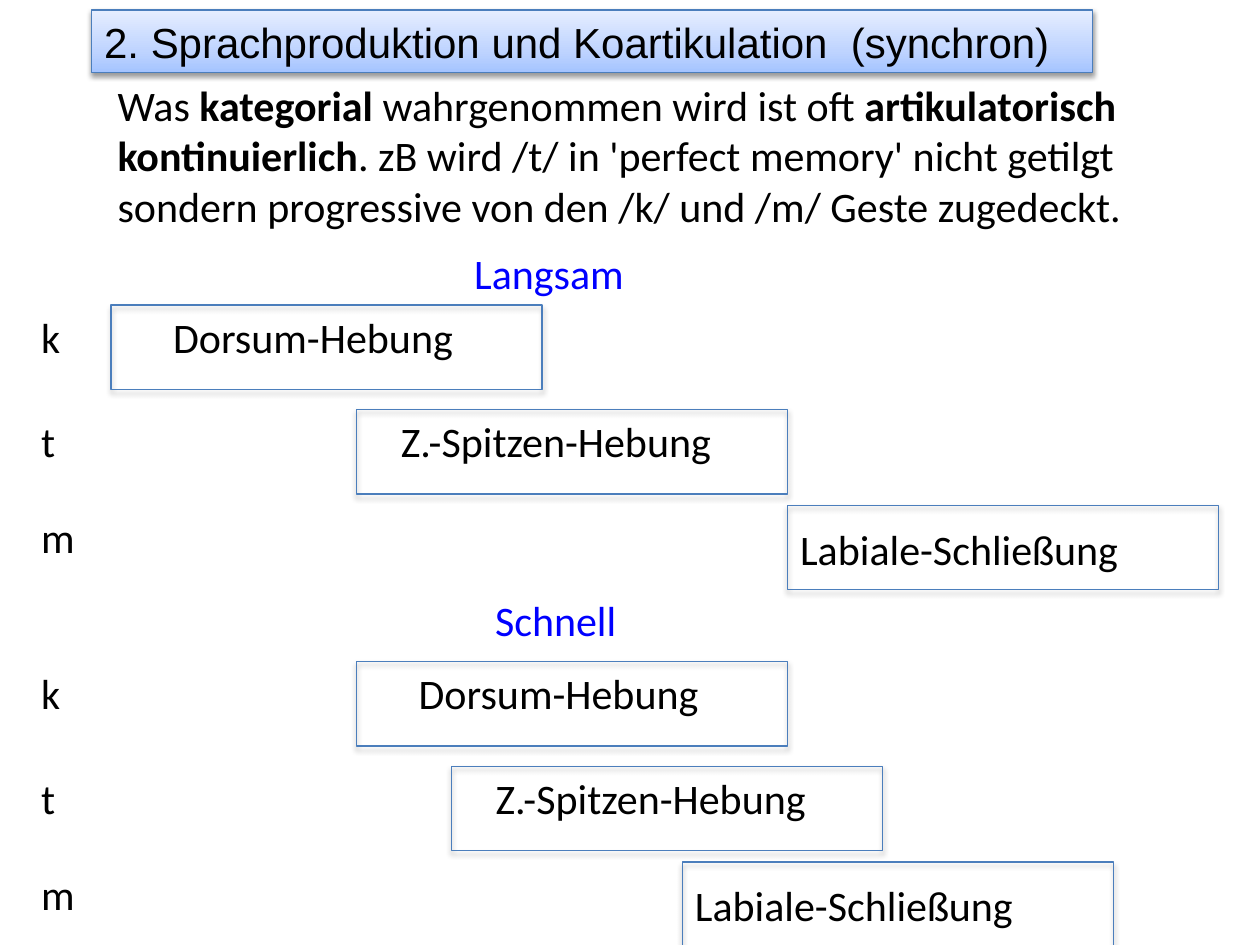
from copy import deepcopy

from lxml.etree import SubElement
from pptx import Presentation
from pptx.dml.color import RGBColor
from pptx.enum.shapes import MSO_SHAPE as Shape
from pptx.enum.text import MSO_ANCHOR as Anchor, MSO_AUTO_SIZE as AutoSize, PP_ALIGN as Align
from pptx.oxml.ns import qn
from pptx.util import Cm, Pt

COLORS = {"text": "000000", "tempo": "0000FF", "line": "4B7EBC", "shadow": "000000"}
TITLE_GRADIENT = [(0, "A4C4FF"), (0.35, "BFD4FF"), (1, "E6EEFF")]

TITLE = "2. Sprachproduktion und Koartikulation  (synchron)"
INTRO = [
    ("Was ", False),
    ("kategorial ", True),
    ("wahrgenommen wird ist oft ", False),
    ("artikulatorisch kontinuierlich", True),
    (". zB wird /t/ in 'perfect memory' nicht getilgt sondern progressive "
     "von den /k/ und /m/ Geste zugedeckt.", False),
]

# Lengths in cm: row offset, label inset and width inside the bar
GESTURES = [
    dict(sound="k", name="Dorsum-Hebung", row=0, inset=(1, 0), width=6.6),
    dict(sound="t", name="Z.-Spitzen-Hebung", row=2.11, inset=(0.64, 0), width=8.05),
    dict(sound="m", name="Labiale-Schließung", row=4.04, inset=(0, 0.23), width=7.62),
]
TEMPOS = [
    dict(name="Langsam", at=(9.31, 4.87), top=6.15, bars=(2.24, 7.19, 15.88)),
    dict(name="Schnell", at=(9.73, 11.86), top=13.34, bars=(7.19, 9.1, 13.76)),
]
SOUND_LEFT, SOUND_WIDTH = 0.58, 1.65
BAR_WIDTH, BAR_HEIGHT = 8.69, 1.7
LINE_HEIGHT = 1.27


def color(name):
    return RGBColor.from_string(COLORS[name])


def write(box, spans, font="Calibri", tint="text"):
    frame = box.text_frame
    for key, value in dict(word_wrap=True, auto_size=AutoSize.SHAPE_TO_FIT_TEXT,
                           vertical_anchor=Anchor.TOP).items():
        setattr(frame, key, value)
    para = frame.paragraphs[0]
    para.alignment = Align.LEFT
    for text, bold in spans:
        span = para.add_run()
        span.text = text
        for key, value in dict(name=font, size=Pt(24), bold=bold).items():
            setattr(span.font, key, value)
        span.font.color.rgb = color(tint)


def add_text(shapes, left, top, width, spans, height=LINE_HEIGHT, tint="text"):
    box = shapes.add_textbox(Cm(left), Cm(top), Cm(width), Cm(height))
    write(box, spans, tint=tint)


def add_outlined(shapes, left, top, width, height, distance, opacity):
    """Add an unfilled rectangle with a soft shadow below it."""
    box = shapes.add_shape(Shape.RECTANGLE, Cm(left), Cm(top), Cm(width), Cm(height))
    box.fill.background()
    box.line.color.rgb = color("line")
    box.line.width = Pt(0.75)
    box.shadow.inherit = False
    effects = box.element.spPr.find(qn("a:effectLst"))
    shadow = SubElement(effects, qn("a:outerShdw"), blurRad=str(Pt(3.1)),
                        dist=str(Pt(distance)), dir="5400000", rotWithShape="0")
    tone = SubElement(shadow, qn("a:srgbClr"), val=COLORS["shadow"])
    SubElement(tone, qn("a:alpha"), val=str(opacity * 1000))
    return box


def add_title(page):
    box = add_outlined(page.shapes, 1.85, 0.2, 20.17, LINE_HEIGHT, 1.6, 38)
    box.fill.gradient()
    box.fill.gradient_angle = 90
    stop_list = box.element.spPr.find(".//" + qn("a:gsLst"))
    stop_list.append(deepcopy(stop_list[-1]))
    for stop, (position, tint) in zip(box.fill.gradient_stops, TITLE_GRADIENT):
        stop.position = position
        stop.color.rgb = RGBColor.from_string(tint)
    write(box, [(TITLE, False)], font="Arial")


def add_tempo(page, tempo):
    add_text(page.shapes, *tempo["at"], 4.24, [(tempo["name"], False)], tint="tempo")
    for gesture, left in zip(GESTURES, tempo["bars"]):
        top = tempo["top"] + gesture["row"]
        add_text(page.shapes, SOUND_LEFT, top, SOUND_WIDTH, [(gesture["sound"], False)])
        group = page.shapes.add_group_shape().shapes
        right, down = gesture["inset"]
        add_text(group, left + right, top + down, gesture["width"], [(gesture["name"], False)])
        add_outlined(group, left, top, BAR_WIDTH, BAR_HEIGHT, 1.8, 35)


def main():
    deck = Presentation()
    deck.slide_width, deck.slide_height = Cm(25.4), Cm(19.05)
    page = deck.slides.add_slide(deck.slide_layouts[6])
    add_title(page)
    add_text(page.shapes, 2.12, 1.48, 22.43, INTRO, height=3.33)
    for tempo in TEMPOS:
        add_tempo(page, tempo)
    deck.save("out.pptx")


if __name__ == "__main__":
    main()
